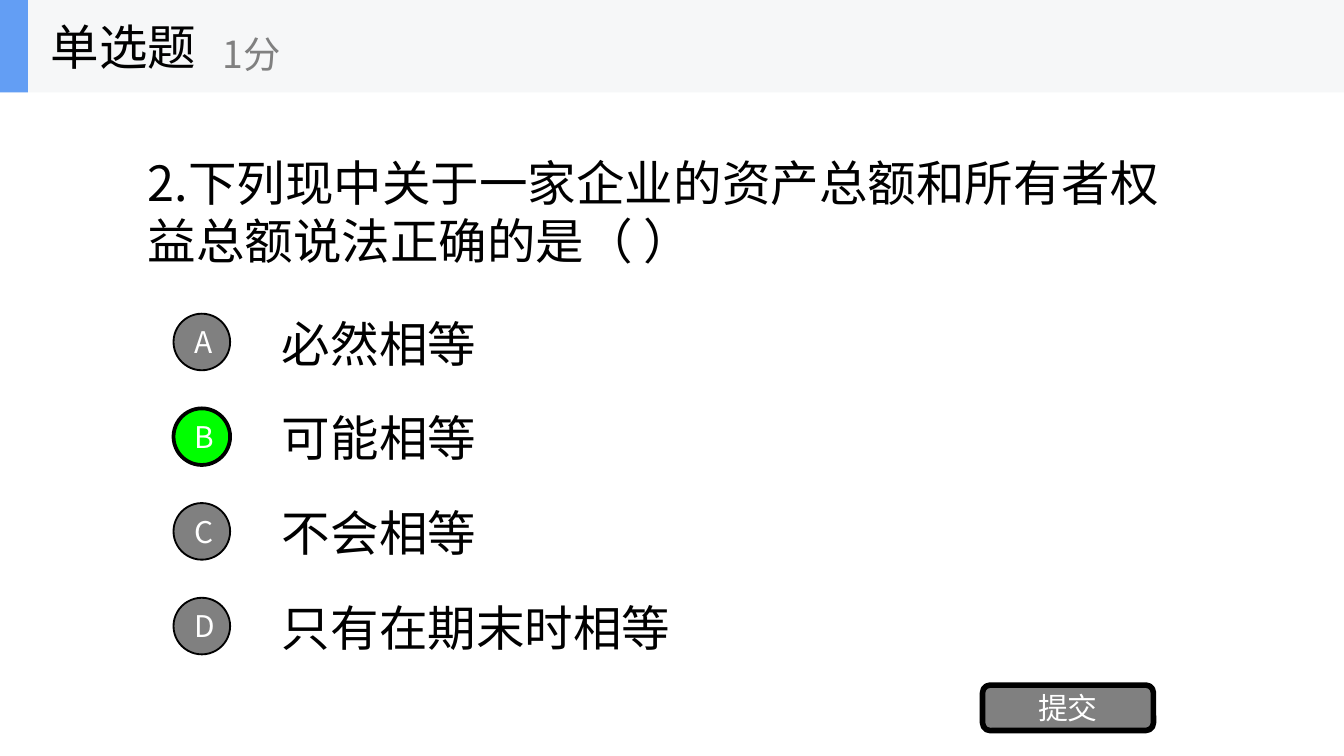
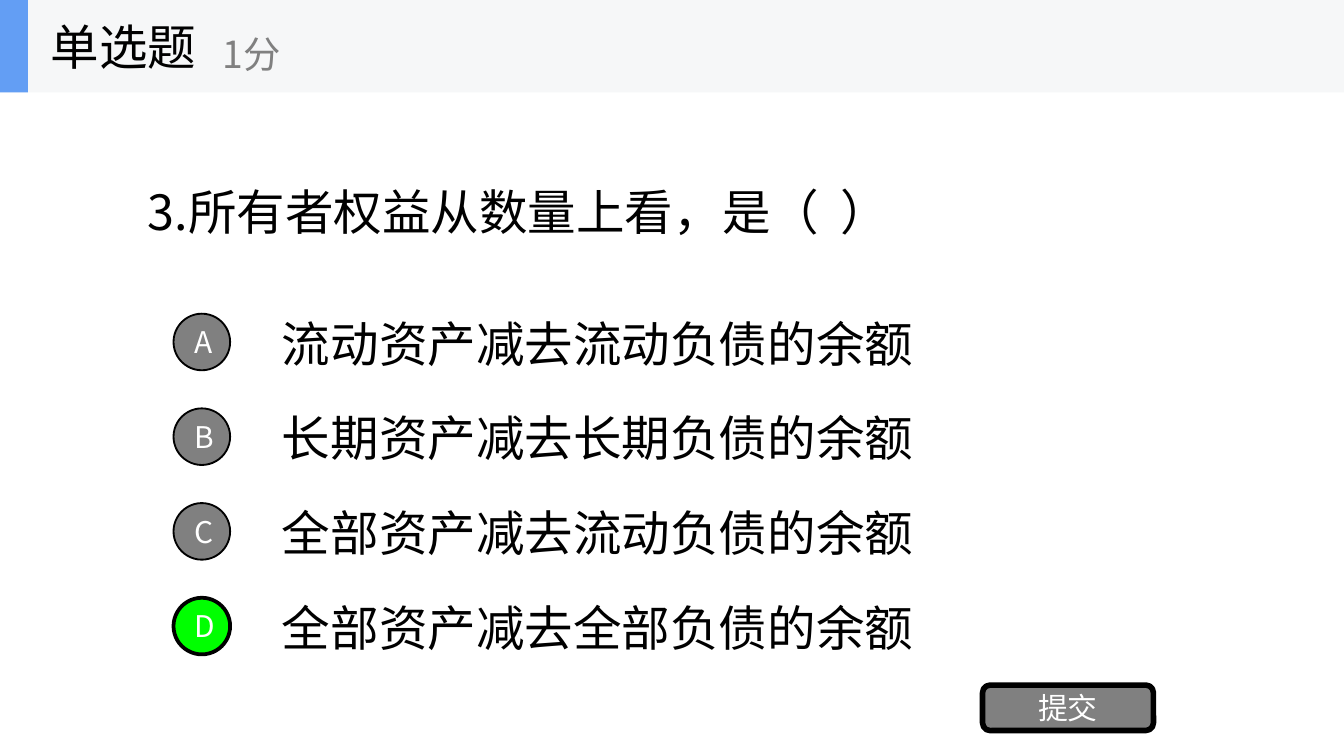
from lxml import etree
from pptx import Presentation
from pptx.dml.color import RGBColor
from pptx.enum.shapes import MSO_SHAPE
from pptx.enum.text import MSO_ANCHOR, PP_ALIGN
from pptx.oxml.ns import qn
from pptx.util import Cm, Pt

RECTANGLE, ROUNDED, OVAL = MSO_SHAPE.RECTANGLE, MSO_SHAPE.ROUNDED_RECTANGLE, MSO_SHAPE.OVAL
LEFT, CENTER = PP_ALIGN.LEFT, PP_ALIGN.CENTER
MIDDLE = MSO_ANCHOR.MIDDLE

BLACK = RGBColor(0x00, 0x00, 0x00)
WHITE = RGBColor(0xFF, 0xFF, 0xFF)
GRAY = RGBColor(0x80, 0x80, 0x80)
GREEN = RGBColor(0x00, 0xFF, 0x00)
BLUE = RGBColor(0x63, 0x9E, 0xF4)
PALE = RGBColor(0xF6, 0xF7, 0xF8)

FONT = "Noto Sans CJK SC"
PAGE_WIDTH, PAGE_HEIGHT = 25.4, 14.29
BAND_HEIGHT = 1.75
OPTION_TOP, OPTION_HEIGHT, OPTION_PITCH = 5.8, 1.35, 1.79
CIRCLE_TOP, CIRCLE_SIZE = 5.93, 1.07

QUESTIONS = [
    ("2.下列现中关于一家企业的资产总额和所有者权益总额说法正确的是（ ）", "B",
     ["必然相等", "可能相等", "不会相等", "只有在期末时相等"]),
    ("3.所有者权益从数量上看，是（  ）", "D",
     ["流动资产减去流动负债的余额", "长期资产减去长期负债的余额",
      "全部资产减去流动负债的余额", "全部资产减去全部负债的余额"]),
]


def add_text(parent, text, *place, box=None, size=26, color=BLACK, align=LEFT, wrap=True):
    """Write into the given box, or into a new text box at place (cm)."""
    box = box or parent.shapes.add_textbox(*map(Cm, place))
    frame = box.text_frame
    frame.word_wrap = wrap
    frame.vertical_anchor = MIDDLE
    para = frame.paragraphs[0]
    para.alignment = align
    span = para.add_run()
    span.text = text
    span.font.size = Pt(size)
    span.font.name = FONT
    span.font.color.rgb = color
    etree.SubElement(span.font._element, qn("a:ea"), typeface=FONT)


def add_block(parent, kind, *place, fill, line=0, text=""):
    """Add a filled shape at place (cm), with a black outline if line is set."""
    shape = parent.shapes.add_shape(kind, *map(Cm, place))
    shape.shadow.inherit = False
    shape.fill.solid()
    shape.fill.fore_color.rgb = fill
    if line:
        shape.line.color.rgb = BLACK
        shape.line.width = Pt(line)
    else:
        shape.line.fill.background()
    if text:
        add_text(parent, text, box=shape, size=16, color=WHITE, align=CENTER)


deck = Presentation()
deck.slide_width, deck.slide_height = Cm(PAGE_WIDTH), Cm(PAGE_HEIGHT)

for question, answer, options in QUESTIONS:
    page = deck.slides.add_slide(deck.slide_layouts[6])
    add_text(page, question, 2.54, BAND_HEIGHT, 20.32, 4.47)

    for row, option in enumerate(options):
        add_text(page, option, 5.08, OPTION_TOP + row * OPTION_PITCH, 17.78, OPTION_HEIGHT)

    for row, letter in enumerate("ABCD"):
        correct = letter == answer
        add_block(page, OVAL, 3.28, CIRCLE_TOP + row * OPTION_PITCH, CIRCLE_SIZE, CIRCLE_SIZE,
                  fill=GREEN if correct else GRAY, line=2 if correct else 1, text=letter)

    add_block(page, ROUNDED, 18.57, 12.95, 3.23, 0.86, fill=GRAY, line=3, text="提交")

    header = page.shapes.add_group_shape()
    add_block(header, RECTANGLE, 0, 0, PAGE_WIDTH, BAND_HEIGHT, fill=PALE)
    add_block(header, RECTANGLE, 0, 0, 0.53, BAND_HEIGHT, fill=BLUE)
    add_text(header, "单选题", 0.71, 0, 5.28, BAND_HEIGHT, wrap=False)
    add_text(header, "1分", 3.96, 0.3, 6.35, 1.42, size=20, color=GRAY, wrap=False)

deck.save("out.pptx")
